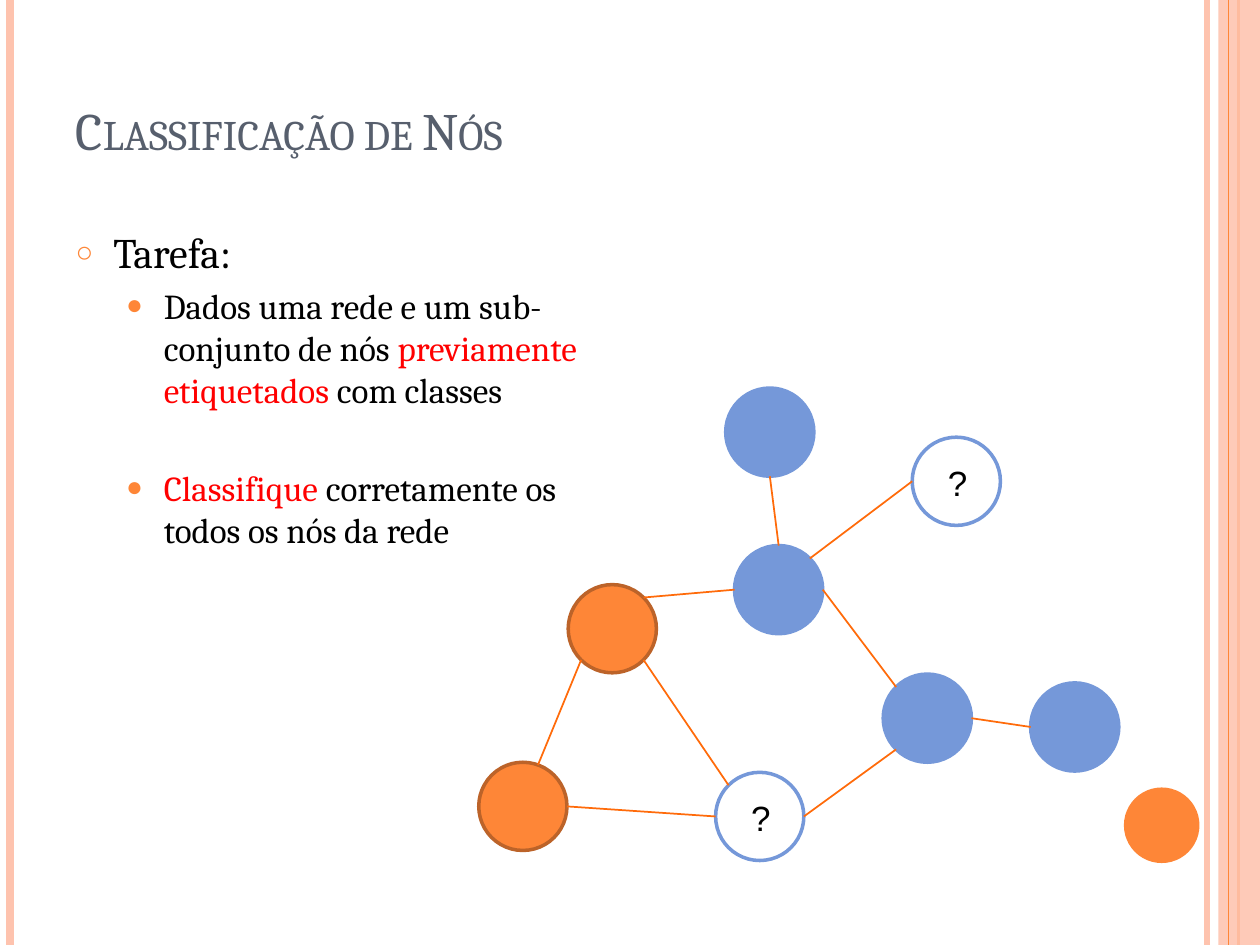
"""Build the node classification slide: a task list beside a partly labelled network."""
from math import cos, pi, sin

from lxml import etree
from pptx import Presentation
from pptx.dml.color import RGBColor
from pptx.enum.shapes import MSO_CONNECTOR, MSO_SHAPE
from pptx.enum.text import MSO_ANCHOR, MSO_AUTO_SIZE, PP_ALIGN
from pptx.oxml.ns import qn
from pptx.util import Inches, Pt

LINE, OVAL, RECT = MSO_CONNECTOR.STRAIGHT, MSO_SHAPE.OVAL, MSO_SHAPE.RECTANGLE
LEFT, CENTER = PP_ALIGN.LEFT, PP_ALIGN.CENTER
BOTTOM, TOP, MIDDLE = MSO_ANCHOR.BOTTOM, MSO_ANCHOR.TOP, MSO_ANCHOR.MIDDLE
FIXED = MSO_AUTO_SIZE.NONE

THEME = {
    "serif": "Cambria", "sans": "Arial",
    "title": 30, "task": 24, "item": 20, "mark": 20,
    "slate": "575F6D", "black": "000000", "red": "FF0000",
    "orange": "FE8637", "brown": "BC6329", "blue": "7598D9",
    "edge": "FF6B0A", "peach": "FEC3AE",
}
COLS, ROWS = 100, 75
INK = {name: RGBColor.from_string(THEME[name]) for name in
       ("slate", "black", "red", "orange", "brown", "blue", "edge", "peach")}

deck = Presentation()
deck.slide_width, deck.slide_height = Inches(10), Inches(7.5)
CELL = deck.slide_width / COLS
slide = deck.slides.add_slide(deck.slide_layouts[1])
shapes = slide.shapes


def place(*cells):
    """Turn grid cells into slide lengths."""
    return [round(cell * CELL) for cell in cells]


def link(start, end, ink, width):
    """Draw a plain straight line between two grid points."""
    line = shapes.add_connector(LINE, *place(*start, *end))
    line.line.color.rgb = INK[ink]
    line.line.width = Pt(width)
    etree.SubElement(line._element.spPr, qn("a:effectLst"))
    return line


for x, ink, width in ((95.8, "peach", 3), (0.8, "peach", 4.5), (98.3, "orange", 1.5)):
    link((x, 0), (x, ROWS), ink, width)
band = shapes.add_shape(RECT, *place(96.7, 0, 3.3, ROWS))
band.shadow.inherit = False
band.fill.solid()
band.fill.fore_color.rgb = INK["peach"]
band.line.fill.background()
tint = band._element.spPr.find(qn("a:solidFill"))[0]
etree.SubElement(tint, qn("a:alpha"), val="87000")
link((97.5, 0), (97.5, ROWS), "orange", 0.75)

title, body = shapes.title, slide.placeholders[1]
for holder, cells, anchor in ((title, (5, 0.8, 81.7, 12.5), BOTTOM),
                              (body, (5, 17.5, 46.6, 53.3), TOP)):
    holder.left, holder.top, holder.width, holder.height = place(*cells)
    holder.text_frame.auto_size = FIXED
    holder.text_frame.vertical_anchor = anchor

title.text_frame.text = "Classificação de Nós"
head = title.text_frame.paragraphs[0]
head.alignment = LEFT
font = head.runs[0].font
font.name, font.size = THEME["serif"], Pt(THEME["title"])
font.color.rgb = INK["slate"]
font._element.set("cap", "small")

TASK = [
    (0, "task", 6, 3, "○", "70000", [("Tarefa:", "black")]),
    (1, "item", 4, 7, "●", "80000", [
        ("Dados uma rede e um sub-conjunto de nós ", "black"),
        ("previamente etiquetados ", "red"), ("com classes", "black")]),
    (1, "item", 32, 7, "●", "80000", [
        ("Classifique ", "red"), ("corretamente os todos os nós da rede", "black")]),
]
frame = body.text_frame
for row, (level, size, gap, indent, mark, scale, parts) in enumerate(TASK):
    para = frame.add_paragraph() if row else frame.paragraphs[0]
    para.level, para.alignment, para.space_before = level, LEFT, Pt(gap)
    props = para._p.get_or_add_pPr()
    props.set("marL", str(place(indent)[0]))
    props.set("indent", str(place(-3)[0]))
    tone = etree.SubElement(props, qn("a:buClr"))
    etree.SubElement(tone, qn("a:srgbClr"), val=THEME["orange"])
    etree.SubElement(props, qn("a:buSzPct"), val=scale)
    etree.SubElement(props, qn("a:buFont"), typeface=THEME["sans"])
    etree.SubElement(props, qn("a:buChar"), char=mark)
    for words, ink in parts:
        run = para.add_run()
        run.text = words
        run.font.name, run.font.size = THEME["serif"], Pt(THEME[size])
        run.font.color.rgb = INK[ink]

RAY = 3.5
NODES = {
    "badge": (92.2, 65.5, 3, "orange", "orange"),
    "upper": (48.6, 49.9, RAY, "orange", "brown"),
    "lower": (41.5, 64, RAY, "orange", "brown"),
    "top": (61.1, 34.3, RAY, "blue", "blue"),
    "hub": (61.8, 46.8, RAY, "blue", "blue"),
    "east": (73.6, 57, RAY, "blue", "blue"),
    "far": (85.3, 57.7, RAY, "blue", "blue"),
    "south": (60.3, 64.8, RAY, None, "blue"),
    "north": (75.9, 38.2, RAY, None, "blue"),
}
for x, y, ray, fill, rim in NODES.values():
    node = shapes.add_shape(OVAL, *place(x - ray, y - ray, 2 * ray, 2 * ray))
    node.shadow.inherit = False
    node.line.color.rgb, node.line.width = INK[rim], Pt(2)
    if ray < RAY:
        node.line.fill.background()
    if fill:
        node.fill.solid()
        node.fill.fore_color.rgb = INK[fill]
    else:
        node.fill.background()

EDGES = [
    ("upper", 45, "south", 225), ("lower", 0, "south", 180),
    ("upper", -45, "hub", 180), ("hub", 0, "east", 225),
    ("south", 0, "east", 135), ("hub", -90, "top", 90),
    ("hub", -45, "north", 180), ("upper", 135, "lower", -70),
    ("east", 0, "far", 180),
]
for first, out, second, into in EDGES:
    ends = [(NODES[name][0] + RAY * cos(turn * pi / 180),
             NODES[name][1] + RAY * sin(turn * pi / 180))
            for name, turn in ((first, out), (second, into))]
    link(*ends, "edge", 1)

for name in ("south", "north"):
    x, y = NODES[name][:2]
    box = shapes.add_textbox(*place(x - 1.7, y - 2.1, 3.6, 4.4))
    box.text_frame.word_wrap = False
    box.text_frame.vertical_anchor = MIDDLE
    box.text_frame.text = "?"
    para = box.text_frame.paragraphs[0]
    para.alignment = CENTER
    font = para.runs[0].font
    font.name, font.size = THEME["sans"], Pt(THEME["mark"])
    font.color.rgb = INK["black"]

deck.save("out.pptx")
